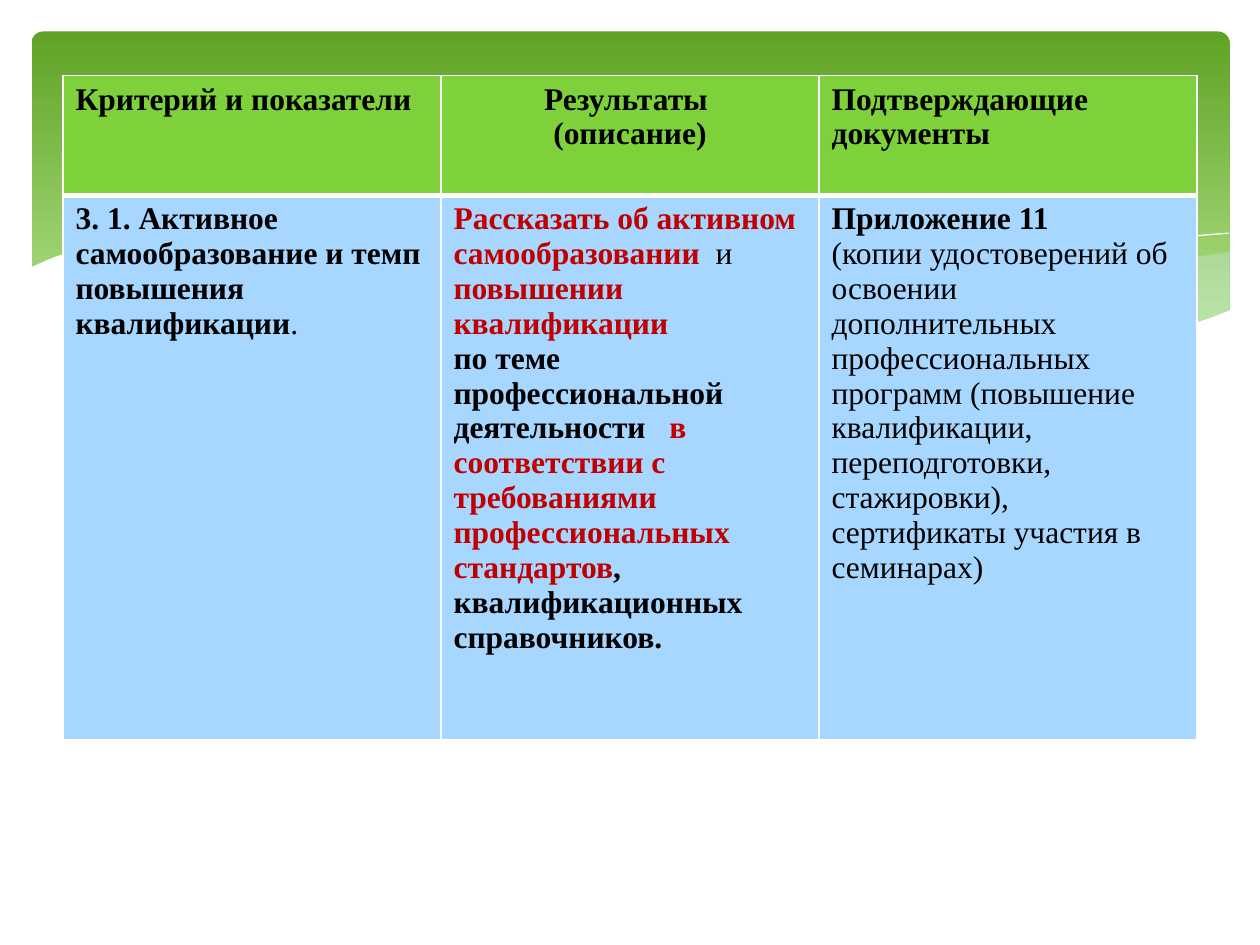
from dataclasses import dataclass
from typing import Optional

import pptx
import pptx.dml.color
import pptx.enum.shapes
import pptx.enum.text
import pptx.oxml
import pptx.oxml.ns
import pptx.util

Inches = pptx.util.Inches
Pt = pptx.util.Pt
Color = pptx.dml.color.RGBColor
Align = pptx.enum.text.PP_ALIGN

WHITE = Color(0xFF, 0xFF, 0xFF)
BLACK = Color(0x00, 0x00, 0x00)
RED = Color(0xC0, 0x00, 0x00)
MIST = Color(0xD6, 0xEC, 0xFF)
DARK = Color(0x5F, 0xA3, 0x26)
PALE = Color(0xB2, 0xE3, 0x89)
GREEN = Color(0x7F, 0xD1, 0x3B)
BLUE = Color(0xA7, 0xD6, 0xFF)
FONT = "Times New Roman"


@dataclass
class Wave:
    points: list[tuple[float, float]]
    fill: Optional[Color] = None
    alpha: int = 100


@dataclass
class Span:
    text: str
    color: Color = BLACK
    bold: bool = True


@dataclass
class Entry:
    lines: list[list[Span]]
    align: Align = Align.LEFT


WAVES = [
    Wave([(9.76, 2), (9.48, 2.04), (9.21, 2.1), (8.61, 2.23), (8.05, 2.37),
          (7.53, 2.48), (7.06, 2.57), (6.61, 2.65), (6.91, 2.69),
          (7.32, 2.74), (7.69, 2.77), (8.03, 2.78), (8.35, 2.77),
          (8.63, 2.75), (8.89, 2.72), (9.13, 2.67), (9.35, 2.62),
          (9.49, 2.57), (9.76, 2.47)], MIST, 29),
    Wave([(8.93, 2.73), (8.37, 2.65), (7.75, 2.54), (7.06, 2.4),
          (6.29, 2.22), (5.84, 2.11), (5.41, 2.03), (5.02, 1.96),
          (4.65, 1.91), (4.2, 1.87), (3.8, 1.85), (3.44, 1.86),
          (3.13, 1.88), (2.86, 1.91), (3.23, 1.96), (3.62, 2.03),
          (4.04, 2.11), (4.49, 2.22), (5.3, 2.4), (5.84, 2.52),
          (6.34, 2.61), (6.8, 2.68), (7.22, 2.74), (7.61, 2.77),
          (7.96, 2.78), (8.38, 2.78), (8.67, 2.76)], MIST, 40),
    Wave([(3.09, 1.95), (3.28, 1.92), (3.53, 1.89), (3.87, 1.87),
          (4.33, 1.87), (4.69, 1.89), (5.1, 1.92), (5.56, 1.97),
          (6.08, 2.04), (6.65, 2.13), (7.27, 2.26), (7.95, 2.41),
          (8.69, 2.61), (9.07, 2.72)]),
    Wave([(6.13, 2.57), (6.53, 2.46), (6.95, 2.35), (7.48, 2.23),
          (8.06, 2.1), (8.66, 1.99), (8.95, 1.94), (9.24, 1.9),
          (9.51, 1.87), (9.75, 1.85)]),
    Wave([(9.77, 2.46), (9.59, 2.53), (9.4, 2.59), (9.2, 2.65),
          (8.99, 2.69), (8.75, 2.73), (8.5, 2.75), (8.09, 2.77),
          (7.61, 2.75), (7.08, 2.7), (6.48, 2.62), (5.79, 2.5),
          (5.03, 2.33), (4.47, 2.2), (3.91, 2.07), (3.4, 1.97),
          (2.92, 1.9), (2.5, 1.86), (2.11, 1.84), (1.77, 1.84),
          (1.46, 1.85), (1.19, 1.87), (0.95, 1.91), (0.76, 1.95),
          (0.59, 1.99), (0.46, 2.03), (0.36, 2.07), (0.23, 2.13),
          (0.23, 3.29), (9.77, 3.29)], WHITE),
]

HEAD = [
    Entry([[Span("Критерий и показатели")]]),
    Entry([[Span("Результаты ")], [Span("(описание)")]], Align.CENTER),
    Entry([[Span("Подтверждающие документы")]]),
]
BODY = [
    Entry([[Span("3. 1. Активное самообразование и темп повышения квалификации"),
            Span(".", bold=False)]]),
    Entry([
        [Span("Рассказать об активном самообразовании  ", RED),
         Span("и", bold=False)],
        [Span("повышении квалификации", RED)],
        [Span("по теме  профессиональной деятельности   "),
         Span("в соответствии с требованиями профессиональных стандартов", RED),
         Span(", квалификационных справочников.")],
    ]),
    Entry([
        [Span("Приложение 11")],
        [Span("(копии удостоверений об освоении дополнительных "
              "профессиональных программ (повышение квалификации, "
              "переподготовки, стажировки), сертификаты участия в семинарах)",
              bold=False)],
    ]),
]


def add_panel(shapes) -> None:
    kind = pptx.enum.shapes.MSO_SHAPE.ROUNDED_RECTANGLE
    panel = shapes.add_shape(kind, Inches(0.25), Inches(0.25),
                             Inches(9.51), Inches(2.7))
    panel.shadow.inherit = False
    panel.adjustments[0] = 0.034
    panel.line.fill.background()
    panel.fill.gradient()
    panel.fill.gradient_angle = 270
    for stop, color, place in zip(panel.fill.gradient_stops,
                                  (DARK, PALE), (0, 0.9)):
        stop.color.rgb = color
        stop.position = place


def add_wave(shapes, wave: Wave) -> None:
    first, *rest = [(Inches(x), Inches(y)) for x, y in wave.points]
    pen = shapes.build_freeform(*first)
    pen.add_line_segments(rest, close=wave.fill is not None)
    shape = pen.convert_to_shape()
    shape.shadow.inherit = False
    if wave.fill is None:
        shape.fill.background()
        shape.line.color.rgb = WHITE
        shape.line.width = Pt(0)
        return
    shape.line.fill.background()
    shape.fill.solid()
    shape.fill.fore_color.rgb = wave.fill
    if wave.alpha < 100:
        tone = shape._element.spPr.find(".//" + pptx.oxml.ns.qn("a:srgbClr"))
        tone.append(pptx.oxml.parse_xml(
            f'<a:alpha {pptx.oxml.ns.nsdecls("a")} val="{wave.alpha * 1000}"/>'))


def add_edge(cell, side: str, width: float) -> None:
    cell._tc.get_or_add_tcPr().append(pptx.oxml.parse_xml(
        f'<a:ln{side} {pptx.oxml.ns.nsdecls("a")} w="{Pt(width)}">'
        f'<a:solidFill><a:srgbClr val="{WHITE}"/></a:solidFill></a:ln{side}>'))


def fill_cell(cell, entry: Entry, color: Color, top: float, base: float) -> None:
    for side, width in zip("LRTB", (1, 1, top, base)):
        add_edge(cell, side, width)
    cell.fill.solid()
    cell.fill.fore_color.rgb = color
    frame = cell.text_frame
    for i, line in enumerate(entry.lines):
        para = frame.add_paragraph() if i else frame.paragraphs[0]
        para.alignment = entry.align
        for span in line:
            run = para.add_run()
            run.text = span.text
            run.font.name = FONT
            run.font.size = Pt(18)
            run.font.bold = span.bold
            run.font.color.rgb = span.color


def add_grid(shapes) -> None:
    grid = shapes.add_table(2, 3, Inches(0.5), Inches(0.6),
                            Inches(9), Inches(5.27)).table
    grid.first_row = False
    grid.horz_banding = False
    bands = [(HEAD, GREEN, 0.95, 1, 3), (BODY, BLUE, 4.32, 3, 1)]
    for r, (entries, color, height, top, base) in enumerate(bands):
        grid.rows[r].height = Inches(height)
        for c, entry in enumerate(entries):
            fill_cell(grid.cell(r, c), entry, color, top, base)


def main() -> None:
    deck = pptx.Presentation()
    deck.slide_width = Inches(10)
    deck.slide_height = Inches(7.5)
    shapes = deck.slides.add_slide(deck.slide_layouts[6]).shapes
    add_panel(shapes)
    for wave in WAVES:
        add_wave(shapes, wave)
    add_grid(shapes)
    deck.save("out.pptx")


if __name__ == "__main__":
    main()
